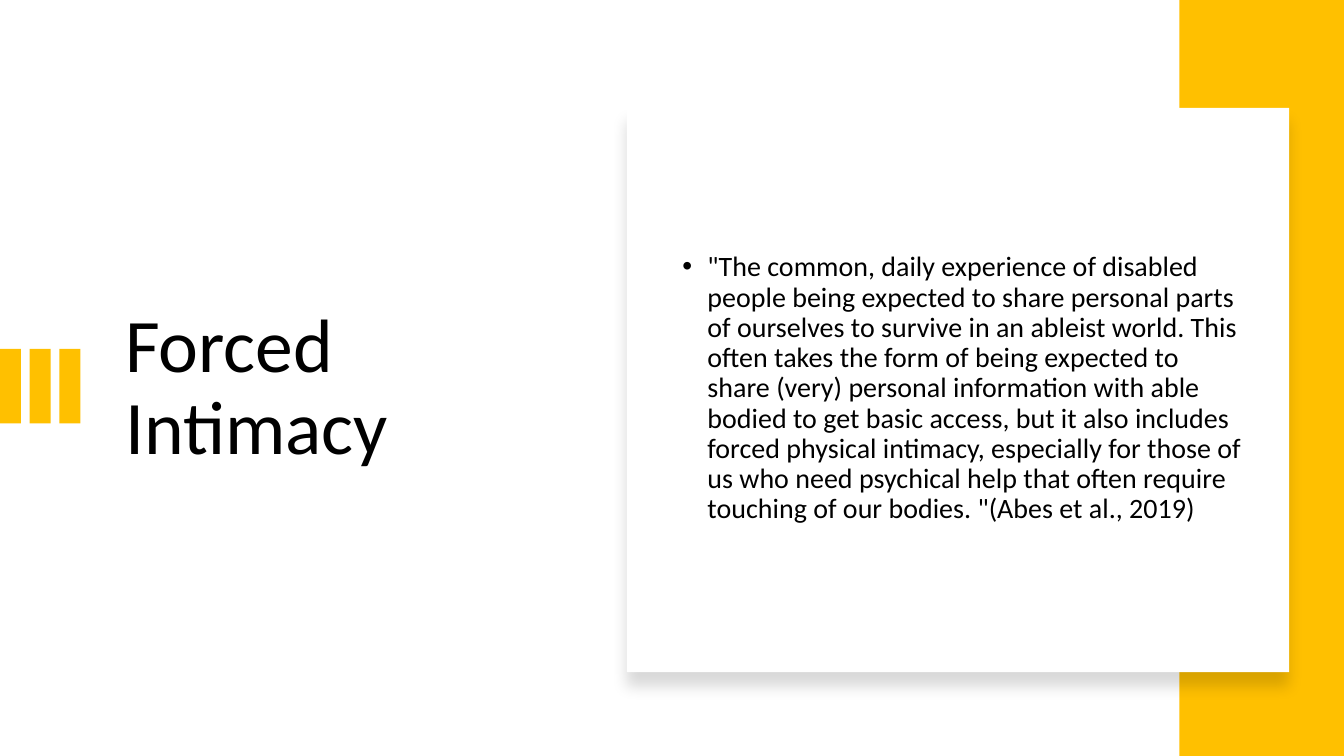
from lxml import etree
from pptx import Presentation
from pptx import util as u
from pptx.dml.color import RGBColor
from pptx.enum import shapes, text
from pptx.oxml import ns

GOLD = RGBColor(0xFF, 0xC0, 0x00)
WHITE = RGBColor(0xFF, 0xFF, 0xFF)
BLACK = RGBColor(0x00, 0x00, 0x00)

QUOTE = (
    '"The common, daily experience of disabled people being expected to share '
    'personal parts of ourselves to survive in an ableist world. This often takes '
    'the form of being expected to share (very) personal information with able '
    'bodied to get basic access, but it also includes forced physical intimacy, '
    'especially for those of us who need psychical help that often require '
    'touching of our bodies. "(Abes et al., 2019)'
)


class Deck:
    font = "Calibri"

    def __init__(self):
        self.prs = Presentation()
        self.prs.slide_width = u.Cm(33.87)
        self.prs.slide_height = u.Cm(19.05)
        self.slide = self.prs.slides.add_slide(self.prs.slide_layouts[1])
        self.slide.background.fill.solid()
        self.slide.background.fill.fore_color.rgb = WHITE

    def rect(self, box, fill, group=None):
        home = group or self.slide
        shape = home.shapes.add_shape(
            shapes.MSO_SHAPE.RECTANGLE, *map(u.Cm, box))
        shape.shadow.inherit = False
        shape.fill.solid()
        shape.fill.fore_color.rgb = fill
        shape.line.fill.background()
        return shape

    def bars(self, count, top, width, height, step):
        """Draw a grouped row of equal bars from the left edge."""
        group = self.slide.shapes.add_group_shape()
        for i in range(count):
            self.rect((i * step, top, width, height), GOLD, group)

    def card(self, box):
        """Draw a white panel with a soft shadow below it."""
        shape = self.rect(box, WHITE)
        effects = shape._element.spPr.find(ns.qn("a:effectLst"))
        shadow = etree.SubElement(
            effects, ns.qn("a:outerShdw"), blurRad=str(u.Pt(11)),
            dist=str(u.Pt(10)), dir="5400000", algn="t", rotWithShape="0")
        color = etree.SubElement(shadow, ns.qn("a:srgbClr"), val=str(BLACK))
        etree.SubElement(color, ns.qn("a:alpha"), val="15000")

    def fill_text(self, holder, box, words, size):
        """Place a placeholder and style its text."""
        holder.left, holder.top, holder.width, holder.height = map(u.Cm, box)
        # Later shapes are already drawn, so bring the text to the front.
        self.slide.shapes._spTree.append(holder._element)
        frame = holder.text_frame
        frame.text = words
        frame.word_wrap = True
        frame.auto_size = text.MSO_AUTO_SIZE.NONE
        frame.vertical_anchor = text.MSO_ANCHOR.MIDDLE
        para = frame.paragraphs[0]
        para.alignment = text.PP_ALIGN.LEFT
        para.line_spacing = 0.9
        font = para.runs[0].font
        font.name = self.font
        font.size = u.Pt(size)
        font.color.rgb = BLACK
        return para

    def title(self, box, words):
        self.fill_text(self.slide.shapes.title, box, words, 54)

    def body(self, box, words):
        para = self.fill_text(self.slide.placeholders[1], box, words, 20)
        para.space_before = u.Pt(10)
        props = para._p.get_or_add_pPr()
        props.set("marL", str(u.Pt(18)))
        props.set("indent", str(-u.Pt(18)))
        etree.SubElement(props, ns.qn("a:buFont"), typeface="Arial")
        etree.SubElement(props, ns.qn("a:buChar"), char="•")


def main():
    deck = Deck()
    deck.bars(3, top=8.79, width=0.53, height=1.88, step=0.75)
    deck.rect((29.72, 0, 4.15, 19.05), GOLD)
    deck.card((15.8, 2.72, 16.69, 14.22))
    deck.title((2.9, 3.71, 10.82, 12.17), "Forced Intimacy")
    deck.body((16.94, 3.71, 14.61, 12.17), QUOTE)
    deck.prs.save("out.pptx")


if __name__ == "__main__":
    main()
